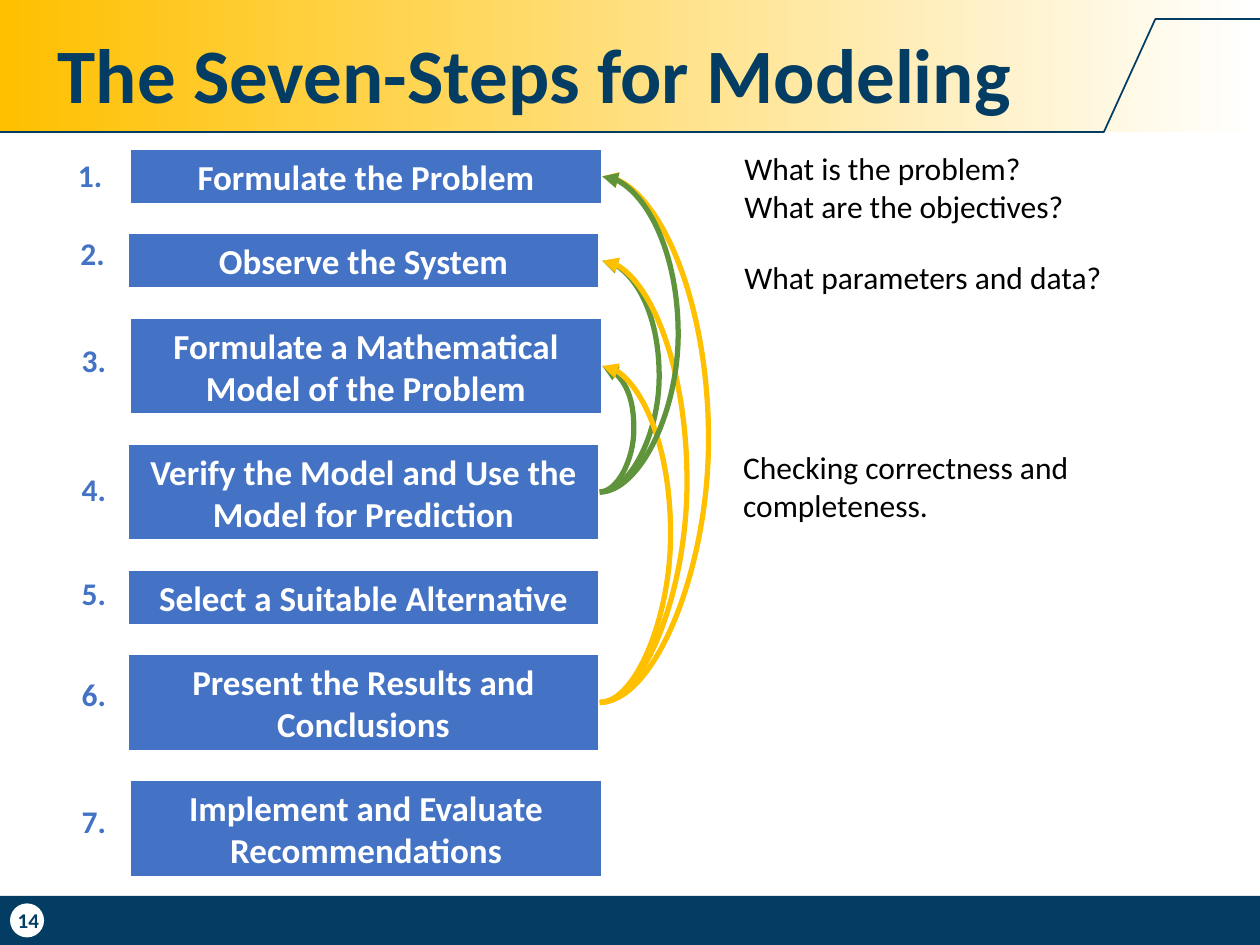
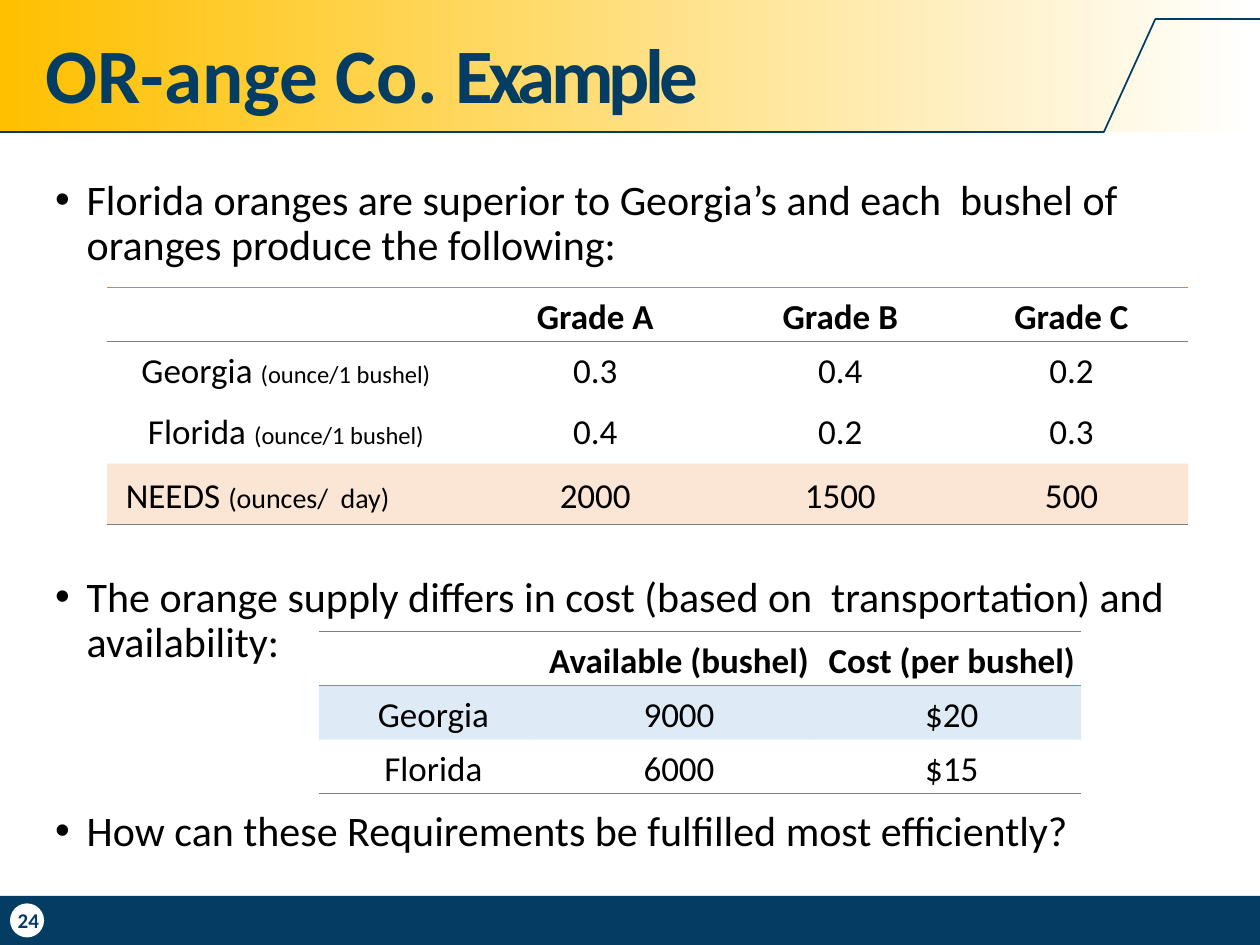
from dataclasses import dataclass

from lxml import etree
from pptx import Presentation
from pptx import util as u
from pptx.dml.color import RGBColor
from pptx.enum import shapes, text
from pptx.oxml import ns
from pptx.oxml import parse_xml


@dataclass(frozen=True)
class Theme:
    font: str = "Calibri"
    navy: str = "043D63"
    gold: str = "FFC000"
    blue: str = "4472C4"
    green: str = "60943C"
    orange: str = "ED7D31"
    sky: str = "5B9BD5"
    gray: str = "7F7F7F"
    white: str = "FFFFFF"
    black: str = "000000"
    title: int = 44
    body: int = 24
    label: int = 20
    note: int = 18
    unit: int = 14
    page: int = 12


T = Theme()
CELL = u.Inches(1)  # the slide is a grid of 10 columns by 7.5 rows
COLS, ROWS = 10, 7.5
BAND_ROWS, FOOTER_TOP = 1.05, 7.11
LEFT, CENTER = text.PP_ALIGN.LEFT, text.PP_ALIGN.CENTER
TOP, MIDDLE = text.MSO_ANCHOR.TOP, text.MSO_ANCHOR.MIDDLE
RIGHT_SIDE = 3
PLAIN_TABLE = "{2D5ABB26-0587-4C30-8999-92F81FD0307C}"

STEP_COLS, STEP_GAP, LINE_ROWS = 3.75, 0.23, 0.33
LOOP_END = 4.78  # column where every loop's arrowhead stops
STEPS = [  # wording, lines, left, top of its number
    ("Formulate the Problem", 1, 1.03, 1.19),
    ("Observe the System", 1, 1.01, 1.81),
    ("Formulate a Mathematical Model of the Problem", 2, 1.03, 2.66),
    ("Verify the Model and Use the Model for Prediction", 2, 1.01, 3.68),
    ("Select a Suitable Alternative", 1, 1.01, 4.51),
    ("Present the Results and Conclusions", 2, 1.01, 5.31),
    ("Implement and Evaluate Recommendations", 2, 1.03, 6.32),
]
LOOPS = [  # from step, back to step, bulge, colour
    (4, 2, 0.47, T.green), (4, 3, 0.27, T.green),
    (6, 1, 0.86, T.gold), (6, 2, 0.69, T.gold), (6, 3, 0.56, T.gold),
    (4, 1, 0.62, T.green),
]
NOTES = [  # left, top, columns, rows, anchor, lines
    (5.81, 1.17, 3.99, 0.63, MIDDLE,
     ["What is the problem?", "What are the objectives?"]),
    (5.81, 1.88, 3.99, 0.63, MIDDLE, ["What parameters and data?"]),
    (5.8, 3.51, 3.18, 0.71, TOP, ["Checking correctness and completeness."]),
]
BULLETS = [  # space before in points, wording
    (0, "Florida oranges are superior to Georgia’s and each  bushel of "
        "oranges produce the following:"),
    (175, "The orange supply diﬀers in cost (based on  transportation) and "
          "availability:"),
    (82, "How can these Requirements be fulﬁlled most eﬃciently?"),
]
YIELDS = [
    ["", "Grade A", "Grade B", "Grade C"],
    [("Georgia ", "(ounce/1 bushel)", T.unit), "0.3", "0.4", "0.2"],
    [("Florida ", "(ounce/1 bushel)", T.unit), "0.4", "0.2", "0.3"],
    [("NEEDS ", "(ounces/  day)", 16), "2000", "1500", "500"],
]
SUPPLY = [
    ["", "Available (bushel)", "Cost (per bushel)"],
    ["Georgia", "9000", "$20"],
    ["Florida", "6000", "$15"],
]


def grid(*cells):
    return [round(c * CELL) for c in cells]


def rgb(value):
    return RGBColor.from_string(value)


def add_run(p, words, size, color=T.black, bold=False):
    r = p.add_run()
    r.text = words
    r.font.name, r.font.size, r.font.bold = T.font, u.Pt(size), bold
    r.font.color.rgb = rgb(color)
    return r


def add_text(s, place, lines, size, color=T.black, bold=False,
             align=LEFT, anchor=TOP):
    tf = s.shapes.add_textbox(*grid(*place)).text_frame
    tf.word_wrap, tf.vertical_anchor = True, anchor
    for i, line in enumerate(lines):
        p = tf.paragraphs[0] if i == 0 else tf.add_paragraph()
        p.alignment = align
        add_run(p, line, size, color, bold)
    return tf


def add_block(s, kind, place, fill=None, line=None):
    sp = s.shapes.add_shape(kind, *grid(*place))
    sp.shadow.inherit = False
    if fill:
        sp.fill.solid()
        sp.fill.fore_color.rgb = rgb(fill)
    if line:
        sp.line.color.rgb, sp.line.width = rgb(line), u.Pt(1.5)
    else:
        sp.line.fill.background()
    return sp


def add_line(s, kind, ends, color, width):
    c = s.shapes.add_connector(kind, *grid(*ends))
    c.line.color.rgb, c.line.width = rgb(color), u.Pt(width)
    etree.SubElement(c._element.spPr, ns.qn("a:effectLst"))
    return c


def add_frame(s, page):
    """Draw the gold title band, its navy outline, the footer and page badge."""
    rect = shapes.MSO_SHAPE.RECTANGLE
    add_block(s, rect, (0, FOOTER_TOP, COLS, ROWS - FOOTER_TOP), T.navy)
    band = add_block(s, rect, (0, 0, COLS, BAND_ROWS))
    band.fill.gradient()
    band.fill.gradient_angle = 0
    for stop, color in zip(band.fill.gradient_stops, (T.gold, T.white)):
        stop.color.rgb = rgb(color)
    outline = [(0, BAND_ROWS), (8.76, BAND_ROWS), (9.17, 0.15), (COLS, 0.15)]
    for start, end in zip(outline, outline[1:]):
        add_line(s, shapes.MSO_CONNECTOR.STRAIGHT, start + end, T.navy, 1)
    add_block(s, shapes.MSO_SHAPE.OVAL, (0.08, 7.17, 0.27, 0.27), T.white)
    add_text(s, (0, FOOTER_TOP, 0.45, ROWS - FOOTER_TOP), [page], T.page,
             T.navy, True, CENTER, MIDDLE)


def add_title(s, place, words):
    return add_text(s, place, [words], T.title, T.navy, True, anchor=MIDDLE)


def add_step(s, words, place):
    sp = add_block(s, shapes.MSO_SHAPE.RECTANGLE, place, T.blue, T.white)
    tf = sp.text_frame
    tf.word_wrap = True
    tf.paragraphs[0].alignment = CENTER
    add_run(tf.paragraphs[0], words, T.label, T.white, True)
    return sp


def add_loop(s, start, end, bulge, color):
    """Curve an arrow from the right side of one step back to another."""
    c = add_line(s, shapes.MSO_CONNECTOR.CURVE, (0, 0, 1, 1), color, 3)
    c.begin_connect(start, RIGHT_SIDE)
    c.end_connect(end, RIGHT_SIDE)
    c.end_x = grid(LOOP_END)[0]
    geom = c._element.spPr.find(ns.qn("a:prstGeom"))
    guides = geom.find(ns.qn("a:avLst"))
    if guides is None:
        guides = etree.SubElement(geom, ns.qn("a:avLst"))
    share = round(bulge * CELL / c.width * 100000)
    etree.SubElement(guides, ns.qn("a:gd"), name="adj1", fmla=f"val {share}")
    etree.SubElement(c.line._get_or_add_ln(), ns.qn("a:tailEnd"),
                     type="triangle")


def add_bullets(s, place, items):
    tf = s.shapes.add_textbox(*grid(*place)).text_frame
    tf.word_wrap = True
    for i, (space, words) in enumerate(items):
        p = tf.paragraphs[0] if i == 0 else tf.add_paragraph()
        pPr = p._p.get_or_add_pPr()
        pPr.set("marL", str(CELL // 4))
        pPr.set("indent", str(-CELL // 4))
        etree.SubElement(pPr, ns.qn("a:buFont"), typeface="Arial")
        etree.SubElement(pPr, ns.qn("a:buChar"), char="•")
        p.line_spacing = 0.9
        if space:
            p.space_before = u.Pt(space)
        add_run(p, words, T.body)


def set_borders(cell, edges):
    """Rule the cell's edges; edges lists (side, colour, points), T before B."""
    tcPr = cell._tc.get_or_add_tcPr()
    for i, (side, color, points) in enumerate(edges):
        tcPr.insert(i, parse_xml(
            f'<a:ln{side} {ns.nsdecls("a")} w="{u.Pt(points)}"><a:solidFill>'
            f'<a:srgbClr val="{color}"/></a:solidFill></a:ln{side}>'))


def fill_cell(cell, content, bold, tint):
    cell.vertical_anchor = MIDDLE
    cell.margin_left, cell.margin_top = grid(0.1, 0.05)
    cell.margin_right = cell.margin_bottom = 0
    if tint:
        cell.fill.solid()
        cell.fill.fore_color.rgb = rgb(tint)
        color = cell._tc.tcPr.find(".//" + ns.qn("a:srgbClr"))
        etree.SubElement(color, ns.qn("a:alpha"), val="20000")
    else:
        cell.fill.background()
    p = cell.text_frame.paragraphs[0]
    p.alignment = CENTER
    if isinstance(content, tuple):
        name, unit, size = content
        add_run(p, name, T.label)
        add_run(p, unit, size)
    elif content:
        add_run(p, content, T.label, bold=bold)


def add_grid_table(s, left, top, widths, heights, data, tinted, rules):
    """Add a table; rules maps a row boundary to its (colour, points)."""
    place = grid(left, top, sum(widths), sum(heights))
    table = s.shapes.add_table(len(heights), len(widths), *place).table
    table._tbl.tblPr.find(ns.qn("a:tableStyleId")).text = PLAIN_TABLE
    table.first_row = table.horz_banding = False
    for column, width in zip(table.columns, grid(*widths)):
        column.width = width
    for i, (height, row) in enumerate(zip(grid(*heights), data)):
        table.rows[i].height = height
        edges = [("T", *rules[0])] if i == 0 else []
        if i + 1 in rules:
            edges.append(("B", *rules[i + 1]))
        tint = tinted.get(i)
        for j, content in enumerate(row):
            cell = table.cell(i, j)
            fill_cell(cell, content, i == 0, tint)
            set_borders(cell, edges)
    return table


def build_steps(s):
    add_frame(s, "14")
    add_title(s, (0.36, 0.11, 8.96, 0.94), "The Seven-Steps for Modeling")
    boxes, top = [], 1.18
    for i, (words, lines, left, number_top) in enumerate(STEPS, 1):
        height = 0.11 + lines * LINE_ROWS
        boxes.append(add_step(s, words, (left, top, STEP_COLS, height)))
        number_left = 0.55 if i > 2 else 0.5 + 0.02 * i
        add_text(s, (number_left, number_top, 0.47, 0.4), [f"{i}."], T.note,
                 T.blue, True)
        top += height + STEP_GAP
    for *place, anchor, lines in NOTES:
        add_text(s, place, lines, T.note, anchor=anchor)
    for start, end, bulge, color in LOOPS:
        add_loop(s, boxes[start - 1], boxes[end - 1], bulge, color)


def build_example(s):
    add_frame(s, "24")
    tf = add_title(s, (0.36, 0.2, 8.96, 0.75), "OR-ange Co. ")
    tf.margin_left = tf.margin_right = tf.margin_top = tf.margin_bottom = 0
    r = add_run(tf.paragraphs[0], "Example", T.title, T.navy, True)
    r.font._element.set("spc", "-280")
    add_bullets(s, (0.34, 1.37, 9.33, 5.7), BULLETS)
    thin = (T.gray, 0.5)
    add_grid_table(s, 2.53, 5.01, (1.72, 2.18, 2.15), (0.43,) * 3, SUPPLY,
                   {1: T.sky}, {0: thin, 1: (T.sky, 1), 3: thin})
    yields = add_grid_table(s, 0.85, 2.28, (2.74, 2.17, 1.72, 1.95),
                            (0.43, 0.43, 0.54, 0.48), YIELDS, {3: T.orange},
                            {0: (T.orange, 1), 1: thin, 4: thin})
    yields.cell(3, 0).margin_right = grid(0.45)[0]


def main():
    prs = Presentation()
    prs.slide_width, prs.slide_height = grid(COLS, ROWS)
    for build in (build_steps, build_example):
        build(prs.slides.add_slide(prs.slide_layouts[6]))
    prs.save("out.pptx")


if __name__ == "__main__":
    main()
